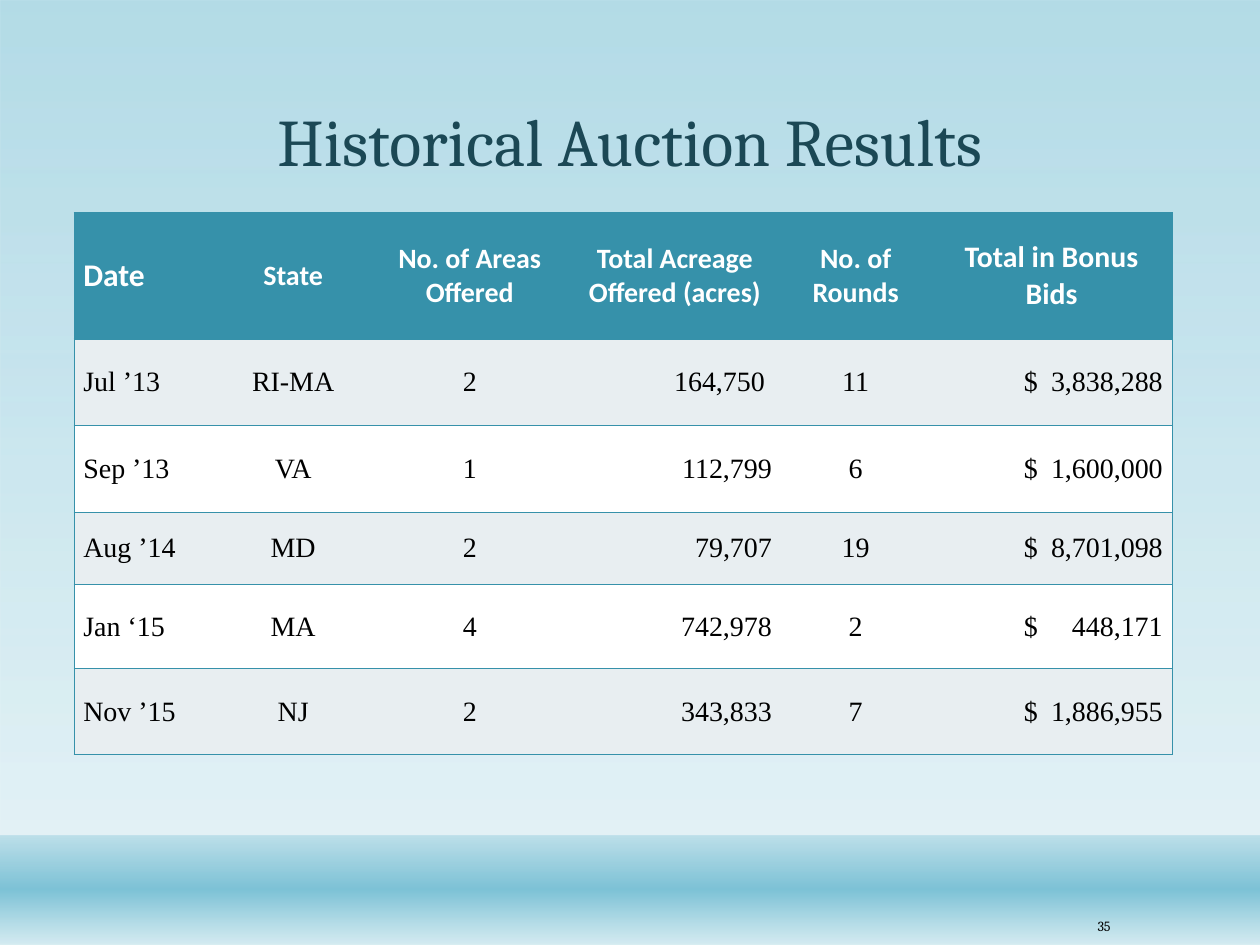
from dataclasses import dataclass
from typing import NamedTuple

from lxml.etree import SubElement
from pptx import Presentation
from pptx.dml.color import RGBColor
from pptx.enum.shapes import MSO_SHAPE
from pptx.enum.text import MSO_ANCHOR, PP_ALIGN
from pptx.oxml import parse_xml
from pptx.oxml.ns import nsdecls, qn
from pptx.util import Cm, Pt


@dataclass(frozen=True)
class Theme:
    teal: str = "3691AA"
    navy: str = "1B4855"
    sea: str = "7DC2D6"
    mist: str = "D4EBF1"
    band: str = "E8EEF1"
    white: str = "FFFFFF"
    black: str = "000000"
    serif: str = "Cambria"
    sans: str = "Calibri"
    roman: str = "Times New Roman"
    title: int = 38
    body: int = 16
    small: int = 8


class Style(NamedTuple):
    font: str
    size: float
    color: str
    bold: bool = False


class Box(NamedTuple):
    left: float
    top: float
    width: float
    height: float

    def place(self) -> list:
        return [Cm(v) for v in self]


class Stop(NamedTuple):
    pos: int
    color: str
    alpha: int


class Column(NamedTuple):
    head: str
    size: int
    width: float
    align: PP_ALIGN


class Sale(NamedTuple):
    date: str
    state: str
    areas: str
    acres: str
    rounds: str
    bids: str
    height: float


THEME = Theme()
LEFT, MID, RIGHT = PP_ALIGN.LEFT, PP_ALIGN.CENTER, PP_ALIGN.RIGHT
COLUMNS = [
    Column("Date", 18, 2.85, LEFT),
    Column("State", 16, 3.12, MID),
    Column("No. of Areas Offered", 16, 4, MID),
    Column("Total Acreage Offered (acres)", 16, 4.27, RIGHT),
    Column("No. of Rounds", 16, 3.02, MID),
    Column("Total in Bonus Bids", 17, 4.88, RIGHT),
]
SALES = [
    Sale("Jul ’13", "RI-MA", "2", "164,750 ", "11", "3,838,288", 1.75),
    Sale("Sep ’13", "VA", "1", "112,799", "6", "1,600,000", 1.75),
    Sale("Aug ’14", "MD", "2", "79,707", "19", "8,701,098", 1.45),
    Sale("Jan ‘15", "MA", "4", "742,978", "2", "448,171", 1.7),
    Sale("Nov ’15", "NJ", "2", "343,833", "7", "1,886,955", 1.73),
]
HEAD = 2.54
PAD = 0.18
INDENT = 1.88


def write(para, text: str, style: Style, align: PP_ALIGN) -> None:
    para.alignment = align
    run = para.add_run()
    run.text = text
    font = run.font
    font.name, font.size, font.bold = style.font, Pt(style.size), style.bold
    font.color.rgb = RGBColor.from_string(style.color)


def label(slide, box: Box, text: str, style: Style, align: PP_ALIGN,
          anchor: MSO_ANCHOR) -> None:
    frame = slide.shapes.add_textbox(*box.place()).text_frame
    frame.word_wrap = True
    frame.vertical_anchor = anchor
    write(frame.paragraphs[0], text, style, align)


def wash(slide, box: Box, stops: list[Stop]) -> None:
    shape = slide.shapes.add_shape(MSO_SHAPE.RECTANGLE, *box.place())
    shape.shadow.inherit = False
    shape.line.fill.background()
    shape.fill.gradient()
    shape.fill.gradient_angle = 270
    items = shape.fill._fill._gradFill.find(qn("a:gsLst"))
    for old in list(items):
        items.remove(old)
    for stop in stops:
        item = SubElement(items, qn("a:gs"), pos=str(stop.pos * 1000))
        color = SubElement(item, qn("a:srgbClr"), val=stop.color)
        SubElement(color, qn("a:alpha"), val=str(stop.alpha * 1000))


def edge(cell, sides: str) -> None:
    props = cell._tc.get_or_add_tcPr()
    for spot, side in enumerate("LRTB"):
        paint = "<a:noFill/>"
        if side in sides:
            paint = f'<a:solidFill><a:srgbClr val="{THEME.teal}"/></a:solidFill>'
        props.insert(spot, parse_xml(
            f'<a:ln{side} {nsdecls("a")} w="12700">{paint}</a:ln{side}>'))


def dress(cell, fill: str, col: int) -> None:
    cell.fill.solid()
    cell.fill.fore_color.rgb = RGBColor.from_string(fill)
    cell.vertical_anchor = MSO_ANCHOR.MIDDLE
    cell.margin_left = cell.margin_right = Cm(PAD)
    cell.margin_top = cell.margin_bottom = Cm(0.13)
    ends = {0: "L", len(COLUMNS) - 1: "R"}
    edge(cell, "TB" + ends.get(col, ""))


def money(cell, text: str, style: Style, width: float) -> None:
    cell.margin_left = Cm(INDENT)
    para = cell.text_frame.paragraphs[0]
    tabs = SubElement(para._p.get_or_add_pPr(), qn("a:tabLst"))
    stop = Cm(width - INDENT - PAD - 0.02)
    SubElement(tabs, qn("a:tab"), pos=str(int(stop)), algn="r")
    write(para, "$\t" + text, style, LEFT)


def results(slide) -> None:
    heights = [HEAD] + [sale.height for sale in SALES]
    box = Box(1.5, 4.29, sum(c.width for c in COLUMNS), sum(heights))
    table = slide.shapes.add_table(
        len(heights), len(COLUMNS), *box.place()).table
    table.horz_banding = False
    for row, height in zip(table.rows, heights):
        row.height = Cm(height)
    plain = Style(THEME.roman, THEME.body, THEME.black)
    for x, col in enumerate(COLUMNS):
        table.columns[x].width = Cm(col.width)
        cell = table.cell(0, x)
        dress(cell, THEME.teal, x)
        write(cell.text_frame.paragraphs[0], col.head,
              Style(THEME.sans, col.size, THEME.white, True),
              MID if x else LEFT)
        for y, sale in enumerate(SALES, 1):
            cell = table.cell(y, x)
            dress(cell, THEME.band if y % 2 else THEME.white, x)
            if x == len(COLUMNS) - 1:
                money(cell, sale.bids, plain, col.width)
            else:
                write(cell.text_frame.paragraphs[0], sale[x], plain, col.align)


def main() -> None:
    deck = Presentation()
    deck.slide_width, deck.slide_height = Cm(25.4), Cm(19.05)
    slide = deck.slides.add_slide(deck.slide_layouts[6])
    wash(slide, Box(0, 0, 25.4, 19.05),
         [Stop(0, THEME.sea, 58), Stop(88, THEME.mist, 65)])
    wash(slide, Box(0, 16.84, 25.4, 2.21),
         [Stop(1, THEME.sea, 38), Stop(49, THEME.sea, 100),
          Stop(100, THEME.mist, 89)])
    label(slide, Box(2.8, 0.74, 19.8, 3.02), "Historical Auction Results",
          Style(THEME.serif, THEME.title, THEME.navy), MID, MSO_ANCHOR.BOTTOM)
    label(slide, Box(21.29, 18.34, 1.35, 0.66), "35",
          Style(THEME.serif, THEME.small, THEME.black), RIGHT,
          MSO_ANCHOR.MIDDLE)
    results(slide)
    deck.save("out.pptx")


if __name__ == "__main__":
    main()
